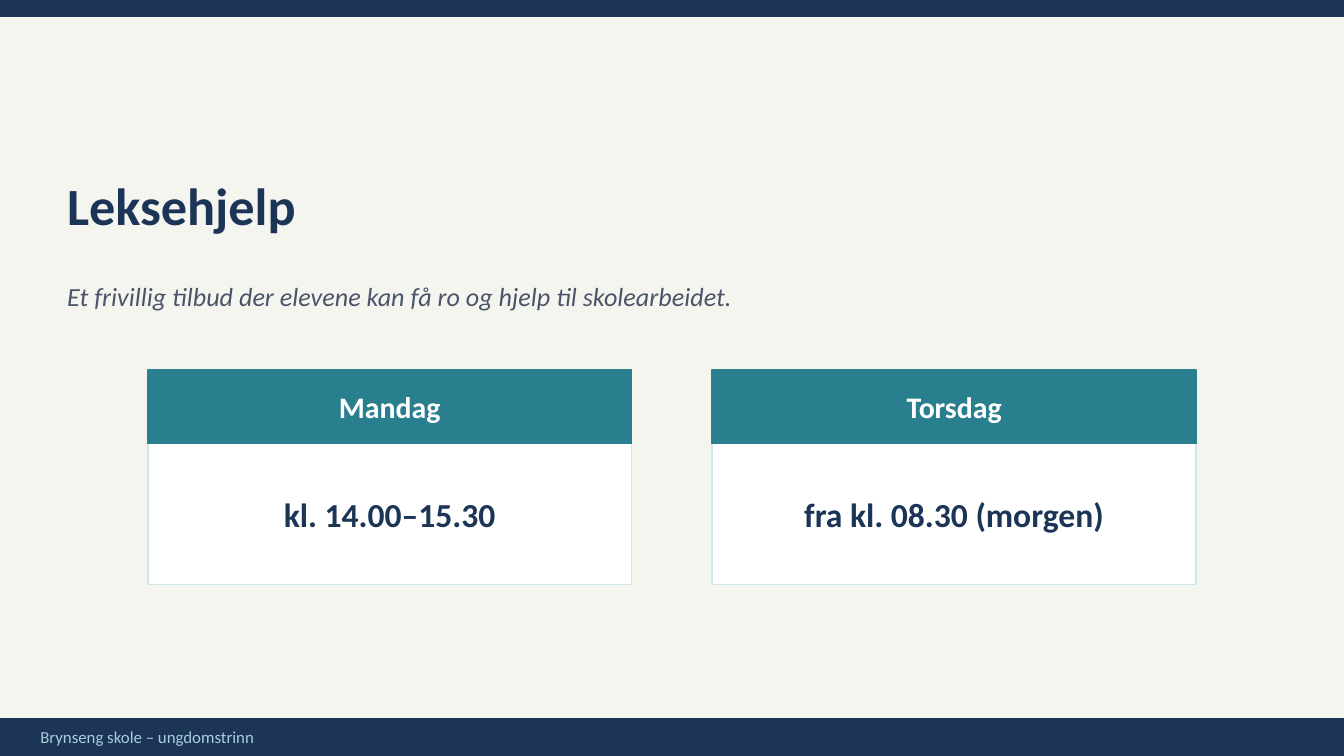
import pptx
import pptx.util
import pptx.dml.color
import pptx.enum.shapes
import pptx.enum.text

RGBColor = pptx.dml.color.RGBColor
NAVY = RGBColor(0x1C, 0x35, 0x57)
TEAL = RGBColor(0x2A, 0x7F, 0x8F)
PALE = RGBColor(0xD0, 0xE8, 0xEC)
MIST = RGBColor(0xAA, 0xCC, 0xDD)
SLATE = RGBColor(0x4A, 0x55, 0x68)
CREAM = RGBColor(0xF5, 0xF5, 0xF0)
WHITE = RGBColor(0xFF, 0xFF, 0xFF)

LEFT = pptx.enum.text.PP_ALIGN.LEFT
CENTER = pptx.enum.text.PP_ALIGN.CENTER

deck = pptx.Presentation()
deck.slide_width = pptx.util.Inches(10)
deck.slide_height = pptx.util.Inches(5.625)
slide = deck.slides.add_slide(deck.slide_layouts[6])
slide.background.fill.solid()
slide.background.fill.fore_color.rgb = CREAM

COLS = 100
ROWS = 56.25
cell = deck.slide_width / COLS


def add_box(col, row, wide, high, fill, edge):
    area = [round(n * cell) for n in (col, row, wide, high)]
    box = slide.shapes.add_shape(pptx.enum.shapes.MSO_SHAPE.RECTANGLE, *area)
    box.shadow.inherit = False
    box.fill.solid()
    box.fill.fore_color.rgb = fill
    box.line.color.rgb = edge
    box.line.width = pptx.util.Pt(1)


def add_text(col, row, wide, high, text, size, color, bold=False, slant=False, align=LEFT):
    area = [round(n * cell) for n in (col, row, wide, high)]
    frame = slide.shapes.add_textbox(*area).text_frame
    frame.word_wrap = True
    frame.vertical_anchor = pptx.enum.text.MSO_ANCHOR.MIDDLE
    frame.margin_left = frame.margin_right = 0
    frame.margin_top = frame.margin_bottom = 0
    line = frame.paragraphs[0]
    line.text = text
    line.alignment = align
    line.font.name = "Calibri"
    line.font.size = pptx.util.Pt(size)
    line.font.color.rgb = color
    line.font.bold = bold
    line.font.italic = slant


foot = 2.75
add_box(0, 0, COLS, 1.2, NAVY, NAVY)
add_box(0, ROWS - foot, COLS, foot, NAVY, NAVY)
add_text(3, 53.6, COLS - 6, 2.4, "Brynseng skole – ungdomstrinn", 9, MIST)

add_text(5, 12, COLS - 10, 6.5, "Leksehjelp", 28, NAVY, bold=True)
add_text(5, 19.5, COLS - 10, 5,
         "Et frivillig tilbud der elevene kan få ro og hjelp til skolearbeidet.",
         14, SLATE, slant=True)

times = [("Mandag", "kl. 14.00–15.30"), ("Torsdag", "fra kl. 08.30 (morgen)")]
wide, gap, top, head = 36, 6, 27.5, 5.5
start = (COLS - len(times) * wide - (len(times) - 1) * gap) / 2
for i, (day, hour) in enumerate(times):
    col = start + i * (wide + gap)
    add_box(col, top, wide, 16, WHITE, PALE)
    add_box(col, top, wide, head, TEAL, TEAL)
    add_text(col, top, wide, head, day, 16, WHITE, bold=True, align=CENTER)
    add_text(col, top + 6, wide, 9.5, hour, 18, NAVY, bold=True, align=CENTER)

deck.save("out.pptx")
